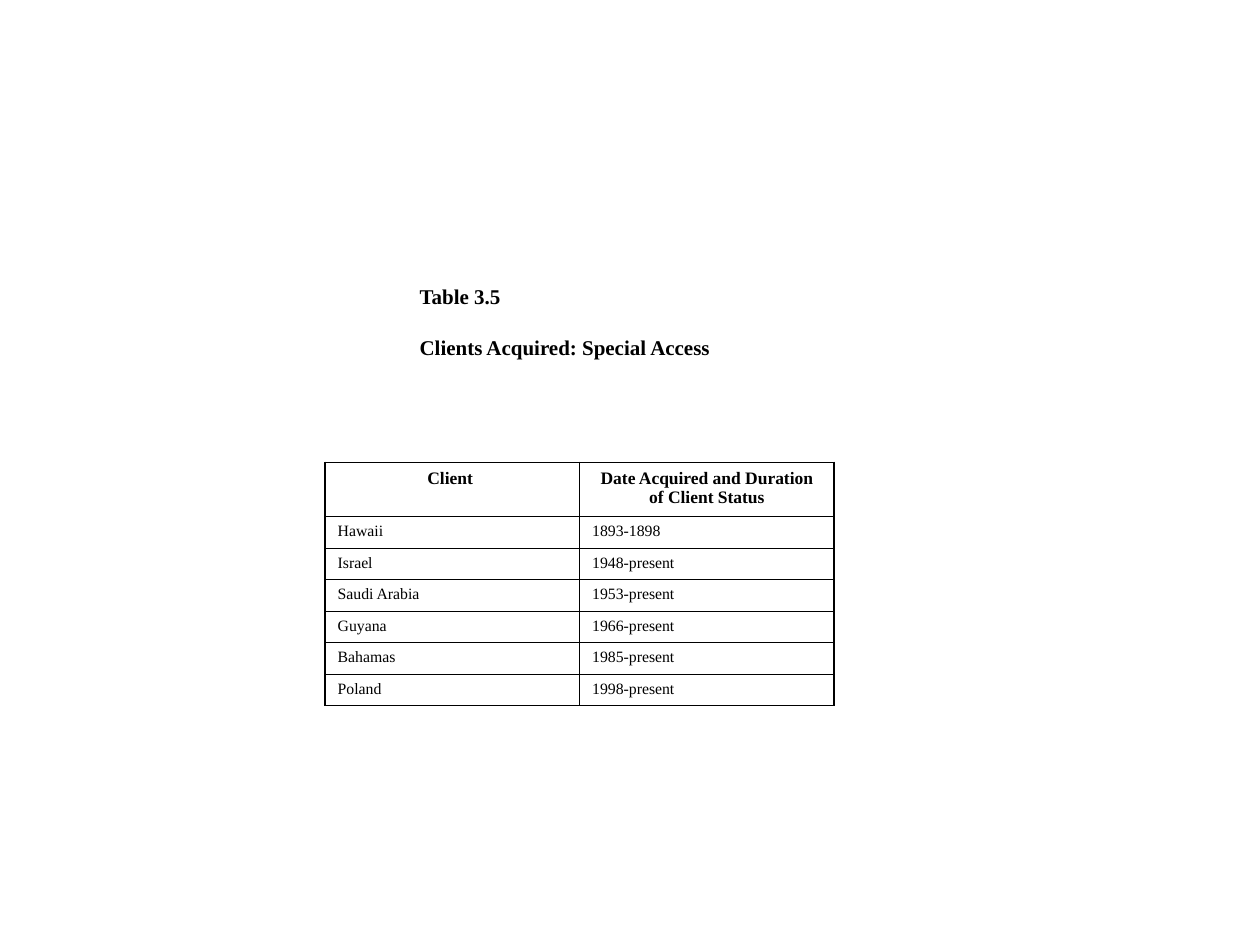
from typing import NamedTuple

from lxml import etree
from pptx import Presentation
from pptx.dml.color import RGBColor
from pptx.enum.text import MSO_ANCHOR, MSO_AUTO_SIZE, PP_ALIGN
from pptx.oxml.ns import qn
from pptx.util import Inches, Pt

LEFT, CENTER = PP_ALIGN.LEFT, PP_ALIGN.CENTER
TOP = MSO_ANCHOR.TOP
NO_AUTOFIT = MSO_AUTO_SIZE.NONE

FONT = "Times New Roman"
BLACK = "000000"
THICK, THIN = 1, 0.75
COLUMN_WIDTH = 2.02
HEADER_HEIGHT, ROW_HEIGHT = 0.43, 0.25


class Client(NamedTuple):
    name: str
    status: str


HEADER = Client("Client ", "Date Acquired and Duration of Client Status")
CLIENTS = [
    Client("Hawaii", "1893-1898"),
    Client("Israel", "1948-present"),
    Client("Saudi Arabia", "1953-present"),
    Client("Guyana", "1966-present"),
    Client("Bahamas", "1985-present"),
    Client("Poland", "1998-present"),
]
TITLE_LINES = ["Table 3.5", "Clients Acquired: Special Access"]


def color(hex_value: str) -> RGBColor:
    return RGBColor.from_string(hex_value)


def add_run(paragraph, text: str, size: float, bold: bool, alignment) -> None:
    paragraph.alignment = alignment
    run = paragraph.add_run()
    run.text = text
    run.font.name = FONT
    run.font.size = Pt(size)
    run.font.bold = bold
    run.font.color.rgb = color(BLACK)


def add_border(cell, side: str, width: float) -> None:
    """Draw one side (L, R, T or B); call in that order, before the fill."""
    properties = cell._tc.get_or_add_tcPr()
    line = etree.SubElement(properties, qn(f"a:ln{side}"), w=str(Pt(width)))
    fill = etree.SubElement(line, qn("a:solidFill"))
    etree.SubElement(fill, qn("a:srgbClr"), val=BLACK)


def write_title(slide) -> None:
    title = slide.shapes.title
    title.left, title.top = Inches(3.33), Inches(2.08)
    title.width, title.height = Inches(2.33), Inches(1.11)
    frame = title.text_frame
    frame.word_wrap = True
    frame.auto_size = NO_AUTOFIT
    frame.vertical_anchor = TOP
    frame.margin_left = frame.margin_right = 0
    frame.margin_top, frame.margin_bottom = Inches(0.17), Inches(0.04)
    for index, text in enumerate(TITLE_LINES):
        paragraph = frame.add_paragraph() if index else frame.paragraphs[0]
        paragraph.space_before = Pt(14.7 if index else 0)
        add_run(paragraph, text, 12, True, LEFT)


def add_client_table(slide) -> None:
    records = [HEADER, *CLIENTS]
    last_row, last_column = len(records) - 1, len(HEADER) - 1
    height = HEADER_HEIGHT + ROW_HEIGHT * len(CLIENTS)
    table = slide.shapes.add_table(
        len(records), len(HEADER), Inches(2.58), Inches(3.67),
        Inches(COLUMN_WIDTH * len(HEADER)), Inches(height)).table
    table.first_row = table.horz_banding = False
    for column in table.columns:
        column.width = Inches(COLUMN_WIDTH)

    for row, record in enumerate(records):
        is_header = row == 0
        table.rows[row].height = Inches(HEADER_HEIGHT if is_header else ROW_HEIGHT)
        for column, text in enumerate(record):
            cell = table.cell(row, column)
            add_run(cell.text_frame.paragraphs[0], text, 10 if is_header else 9,
                    is_header, CENTER if is_header else LEFT)
            thick_sides = {
                "L": is_header or column == 0,
                "R": is_header or column == last_column,
                "T": row <= 1,
                "B": is_header or row == last_row,
            }
            for side, is_thick in thick_sides.items():
                add_border(cell, side, THICK if is_thick else THIN)
            cell.fill.background()


def main() -> None:
    presentation = Presentation()
    presentation.slide_width, presentation.slide_height = Inches(10), Inches(7.5)
    slide = presentation.slides.add_slide(presentation.slide_layouts[5])
    write_title(slide)
    add_client_table(slide)
    presentation.save("out.pptx")


if __name__ == "__main__":
    main()
